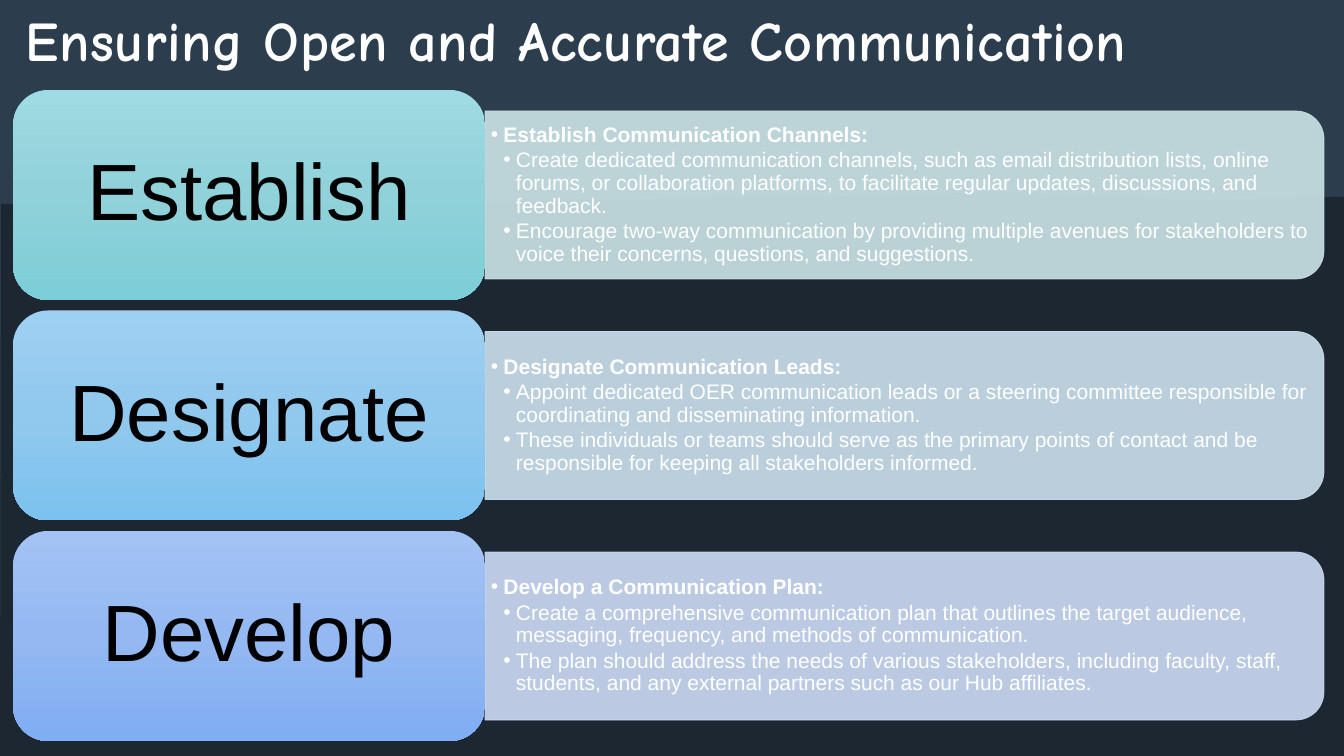
import copy
from dataclasses import dataclass

import lxml.etree
import pptx
import pptx.dml.color
import pptx.enum.shapes
import pptx.enum.text
import pptx.oxml.ns
import pptx.util

SHAPE = pptx.enum.shapes.MSO_SHAPE
ALIGN = pptx.enum.text.PP_ALIGN
ANCHOR = pptx.enum.text.MSO_ANCHOR
WIDE, HIGH = 1344, 756


@dataclass(frozen=True)
class Theme:
    """Colours, fonts and type sizes of the slide."""
    band: str = "2C3D4E"
    base: str = "1C2732"
    light: str = "FFFFFF"
    dark: str = "000000"
    head: str = "Comic Neue"
    body: str = "Arial"
    title: int = 40
    label: int = 57
    note: int = 15


THEME = Theme()

WAVE = [(1020, 192), (1186, 200), (1253, 199), (1334, 197), (1344, 197),
        (1344, 756), (0, 756), (1, 204), (8, 204), (141, 209), (274, 207),
        (357, 205), (440, 203)]

ROWS = [
    ("Establish", "CCE4E7", ("9EDBE3", "91D1D9", "7CCED8"),
     "Establish Communication Channels:",
     ("Create dedicated communication channels, such as email distribution lists, "
      "online forums, or collaboration platforms, to facilitate regular updates, "
      "discussions, and feedback.",
      "Encourage two-way communication by providing multiple avenues for "
      "stakeholders to voice their concerns, questions, and suggestions.")),
    ("Designate", "CCE1EF", ("9ED0F2", "91C8ED", "7CC2F0"),
     "Designate Communication Leads:",
     ("Appoint dedicated OER communication leads or a steering committee "
      "responsible for coordinating and disseminating information.",
      "These individuals or teams should serve as the primary points of contact "
      "and be responsible for keeping all stakeholders informed.")),
    ("Develop", "CDDBF6", ("A3C3F4", "94B8F1", "80AEF3"),
     "Develop a Communication Plan:",
     ("Create a comprehensive communication plan that outlines the target "
      "audience, messaging, frequency, and methods of communication.",
      "The plan should address the needs of various stakeholders, including "
      "faculty, staff, students, and any external partners such as our Hub "
      "affiliates.")),
]


def px(size):
    """Turn pixels into EMU."""
    return pptx.util.Emu(round(size * 914400 / 100.8))


def rgb(code):
    """Turn a hex code into a colour."""
    return pptx.dml.color.RGBColor.from_string(code)


def node(owner, tag, **attrs):
    """Append a drawing element to its owner."""
    return lxml.etree.SubElement(owner, pptx.oxml.ns.qn(tag), **attrs)


def paint(shape, color):
    """Give a shape a flat fill, no line and no shadow."""
    shape.shadow.inherit = False
    shape.fill.solid()
    shape.fill.fore_color.rgb = rgb(color)
    shape.line.fill.background()


def frame(slide, box, pad=(0, 0), anchor=ANCHOR.TOP):
    """Add a wrapped text box and return its text frame."""
    area = slide.shapes.add_textbox(*map(px, box)).text_frame
    area.word_wrap = True
    area.vertical_anchor = anchor
    area.margin_left = area.margin_right = px(pad[0])
    area.margin_top = area.margin_bottom = px(pad[1])
    return area


def write(area, text, size, color, font=THEME.body, bold=False, lead=0.9,
          after=0, align=ALIGN.LEFT, level=None, track=0):
    """Add one paragraph, with a bullet when a level is given."""
    para = area.paragraphs[0]
    if para.runs:
        para = area.add_paragraph()
    para.alignment = align
    para.line_spacing = lead
    para.space_after = pptx.util.Pt(after)
    if level is not None:
        para.level = level
        props = para._p.get_or_add_pPr()
        props.set("marL", str(px(12.5 * (level + 1))))
        props.set("indent", str(-px(12.5)))
        node(props, "a:buFont", typeface=THEME.body)
        node(props, "a:buChar", char="•")
    run = para.add_run()
    run.text = text
    run.font.size = pptx.util.Pt(size)
    run.font.name = font
    run.font.bold = bold
    run.font.color.rgb = rgb(color)
    if track:
        run._r.get_or_add_rPr().set("spc", str(track))


def backdrop(slide, box):
    """Draw the upper band and the dark wave below it."""
    slide.background.fill.solid()
    slide.background.fill.fore_color.rgb = rgb(THEME.base)
    paint(slide.shapes.add_shape(SHAPE.RECTANGLE, *map(px, box)), THEME.band)
    left, top = box[:2]
    points = [(px(left + x), px(top + y)) for x, y in WAVE]
    path = slide.shapes.build_freeform(*points[0])
    path.add_line_segments(points[1:], close=True)
    paint(path.convert_to_shape(), THEME.base)


def heading(slide, box):
    """Write the slide title."""
    write(frame(slide, box), "Ensuring Open and Accurate Communication",
          THEME.title, THEME.light, font=THEME.head, bold=True, lead=0.88,
          track=40)


def panel(slide, box, color, lead, notes):
    """Draw the pale panel, rounded on the right, with its bullets."""
    left, top, wide, high = box
    turned = (left + (wide - high) / 2, top + (high - wide) / 2, high, wide)
    shape = slide.shapes.add_shape(SHAPE.ROUND_2_SAME_RECTANGLE, *map(px, turned))
    shape.rotation = 90
    paint(shape, color)
    shape.line.color.rgb = rgb(color)
    shape.line.width = pptx.util.Pt(0.5)
    for tint in shape._element.spPr.iter(pptx.oxml.ns.qn("a:srgbClr")):
        node(tint, "a:alpha", val="90000")
    area = frame(slide, (left, top + 8, wide - 8, high - 16), (6, 3), ANCHOR.MIDDLE)
    style = dict(size=THEME.note, color=THEME.light, after=2)
    write(area, lead, bold=True, level=0, **style)
    for note in notes:
        write(area, note, level=1, **style)


def card(slide, box, colors, label):
    """Draw the rounded gradient card with its label."""
    left, top, wide, high = box
    shape = slide.shapes.add_shape(SHAPE.ROUNDED_RECTANGLE, *map(px, box))
    paint(shape, colors[0])
    shape.fill.gradient()
    shape.fill.gradient_angle = 270
    stops = shape._element.spPr.find(".//" + pptx.oxml.ns.qn("a:gsLst"))
    stops.append(copy.deepcopy(stops[-1]))
    for index, stop in enumerate(shape.fill.gradient_stops):
        stop.position = index / 2
        stop.color.rgb = rgb(colors[index])
    area = frame(slide, (left + 10, top + 10, wide - 20, high - 20), (24, 12),
                 ANCHOR.MIDDLE)
    write(area, label, THEME.label, THEME.dark, align=ALIGN.CENTER)


def steps(slide, box):
    """Stack the rows evenly, each a panel beside a card."""
    left, top, wide, high = box
    tall, split, inset = 210, 472, 21
    pitch = (high - tall) / (len(ROWS) - 1)
    for index, (label, pale, colors, lead, notes) in enumerate(ROWS):
        y = top + index * pitch
        panel(slide, (left + split, y + inset, wide - split, tall - 2 * inset),
              pale, lead, notes)
        card(slide, (left, y, split, tall), colors, label)


def main():
    """Build the slide and save it."""
    deck = pptx.Presentation()
    deck.slide_width, deck.slide_height = px(WIDE), px(HIGH)
    slide = deck.slides.add_slide(deck.slide_layouts[6])
    backdrop(slide, (0, 0, WIDE, HIGH))
    heading(slide, (26, 14, 1182, 76))
    steps(slide, (13, 90, 1311, 651))
    deck.save("out.pptx")


if __name__ == "__main__":
    main()
